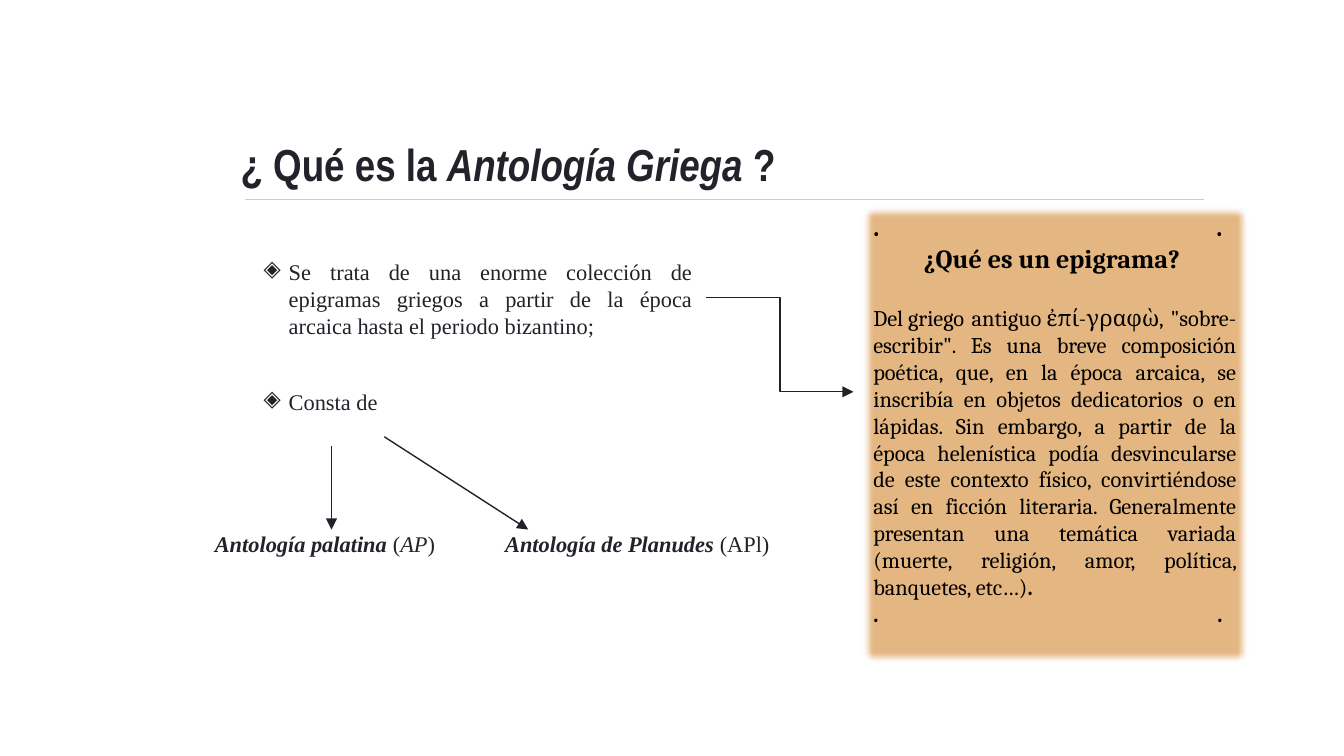
from pptx import Presentation
from pptx.dml.color import RGBColor
from pptx.enum.shapes import MSO_CONNECTOR as CONN, MSO_SHAPE as SHAPE
from pptx.enum.text import MSO_ANCHOR as ANCHOR, PP_ALIGN as ALIGN
from pptx.oxml.ns import qn
from pptx.util import Pt
from lxml.etree import SubElement

INK = "25212A"
SERIF = "Times New Roman"


def rgb(value):
    return RGBColor.from_string(value)


def add_runs(p, runs, font, size, color):
    for text, bold, italic in runs:
        r = p.add_run()
        r.text = text
        r.font.name, r.font.size = font, Pt(size)
        r.font.bold, r.font.italic = bold, italic
        r.font.color.rgb = rgb(color)


prs = Presentation()
prs.slide_width, prs.slide_height = Pt(720), Pt(405)
s = prs.slides.add_slide(prs.slide_layouts[6])

boxes = []
for x, y, w, h in [
    (121.8, 54, 441.4, 55.4),
    (134.1, 131, 244.1, 103),
    (263.5, 276.8, 244.1, 30),
    (108, 276.8, 244.1, 30),
]:
    tf = s.shapes.add_textbox(Pt(x), Pt(y), Pt(w), Pt(h)).text_frame
    tf.word_wrap = True
    tf.margin_left = tf.margin_right = tf.margin_top = tf.margin_bottom = Pt(7.2)
    boxes.append(tf)
title, body, planudes, palatina = boxes

title.vertical_anchor = ANCHOR.BOTTOM
add_runs(title.paragraphs[0], [
    ("¿ Qué es la ", True, False),
    ("Antología Griega ", True, True),
    ("?", True, False),
], "Arial Narrow", 24, INK)

points = [
    "Se trata de una enorme colección de epigramas griegos a partir de la época "
    "arcaica hasta el periodo bizantino;",
    "Consta de ",
]
for i, text in enumerate(points):
    p = body.add_paragraph() if i else body.paragraphs[0]
    p.alignment = ALIGN.JUSTIFY
    if i:
        p.space_before = Pt(26.5)
    pPr = p._p.get_or_add_pPr()
    pPr.set("marL", str(Pt(13.5)))
    pPr.set("indent", str(Pt(-13.5)))
    SubElement(SubElement(pPr, qn("a:buClr")), qn("a:srgbClr"), val=INK)
    SubElement(pPr, qn("a:buChar"), char="◈")
    add_runs(p, [(text, False, False)], SERIF, 12, INK)

for tf, runs in [
    (planudes, [("Antología de Planudes ", True, True), ("(APl)", False, False)]),
    (palatina, [("Antología palatina ", True, True), ("(", False, False),
                ("AP", False, True), (") ", False, False)]),
]:
    tf.paragraphs[0].alignment = ALIGN.JUSTIFY
    add_runs(tf.paragraphs[0], runs, SERIF, 12, INK)

card = s.shapes.add_shape(SHAPE.RECTANGLE, Pt(460.8), Pt(109.4), Pt(208.8), Pt(247))
card.shadow.inherit = False
card.fill.solid()
card.fill.fore_color.rgb = rgb("E4B681")
card.line.color.rgb = rgb("B87647")
card.line.width = Pt(0.75)
SubElement(card._element.spPr.find(qn("a:effectLst")), qn("a:softEdge"), rad=str(Pt(4)))
tf = card.text_frame
tf.word_wrap = True
tf.vertical_anchor = ANCHOR.TOP
definition = (
    "Del\u00a0griego antiguo\u00a0ἐπί-γραφὼ, \"sobre-escribir\". Es una breve composición "
    "poética, que, en la época arcaica, se inscribía en objetos dedicatorios o en "
    "lápidas. Sin embargo, a partir de la época helenística podía desvincularse de "
    "este contexto físico, convirtiéndose así en ficción literaria. Generalmente "
    "presentan una temática variada (muerte, religión, amor, política, banquetes, etc…)"
)
for i, (align, size, before, runs) in enumerate([
    (ALIGN.LEFT, 14, 0, [(".\t.", True, False)]),
    (ALIGN.CENTER, 14, 0, [("¿Qué es un epigrama? ", True, False)]),
    (ALIGN.JUSTIFY, 12, 16.5, [(definition, False, False), (".", True, False)]),
    (ALIGN.LEFT, 12, 0, [(".\t.", True, False)]),
]):
    p = tf.add_paragraph() if i else tf.paragraphs[0]
    p.alignment = align
    if before:
        p.space_before = Pt(before)
    if "\t" in runs[0][0]:
        tabs = SubElement(p._p.get_or_add_pPr(), qn("a:tabLst"))
        SubElement(tabs, qn("a:tab"), pos=str(Pt(187)), algn="r")
    add_runs(p, runs, "Cambria", size, "000000")

for kind, x1, y1, x2, y2, color, arrow in [
    (CONN.STRAIGHT, 131, 106.8, 645.1, 106.8, "CCCCCC", False),
    (CONN.ELBOW, 378.5, 159.3, 457.2, 209.9, "242029", True),
    (CONN.STRAIGHT, 177.6, 239, 177.6, 283.7, "242029", True),
    (CONN.STRAIGHT, 205.9, 234, 283, 283.7, "242029", True),
]:
    c = s.shapes.add_connector(kind, Pt(x1), Pt(y1), Pt(x2), Pt(y2))
    c.line.color.rgb = rgb(color)
    c.line.width = Pt(0.75)
    if arrow:
        SubElement(c.line._get_or_add_ln(), qn("a:tailEnd"), type="triangle")
    SubElement(c._element.spPr, qn("a:effectLst"))

prs.save("out.pptx")
